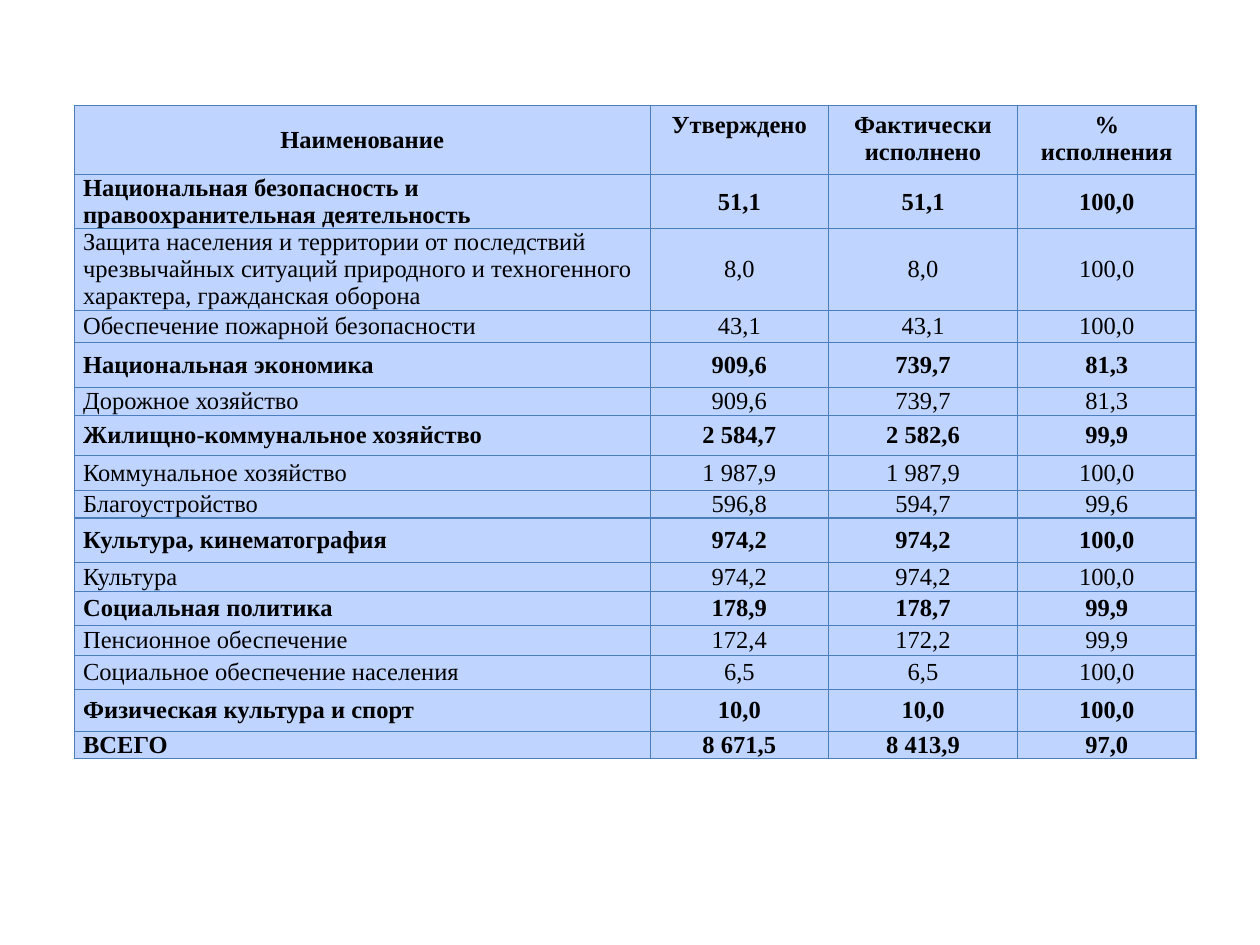
import pptx
import pptx.util
import pptx.dml.color
import pptx.enum.text
import pptx.oxml
import lxml.etree
from pptx.oxml.ns import qn

Pt = pptx.util.Pt
ALIGN = pptx.enum.text.PP_ALIGN
MIDDLE = pptx.enum.text.MSO_ANCHOR.MIDDLE

HEAD = ("Наименование", "Утверждено", "Фактически исполнено", "% исполнения")
WIDTHS = (329, 102, 108, 102)
# height, bold, cells
ROWS = [
    (39.6, True, HEAD),
    (31, True, ("Национальная безопасность и правоохранительная деятельность",
                "51,1", "51,1", "100,0")),
    (46.4, False, ("Защита населения и территории от последствий чрезвычайных "
                   "ситуаций природного и техногенного характера, "
                   "гражданская оборона", "8,0", "8,0", "100,0")),
    (18.4, False, ("Обеспечение пожарной безопасности", "43,1", "43,1", "100,0")),
    (26, True, ("Национальная экономика", "909,6", "739,7", "81,3")),
    (15.6, False, ("Дорожное хозяйство", "909,6", "739,7", "81,3")),
    (23, True, ("Жилищно-коммунальное хозяйство", "2 584,7", "2 582,6", "99,9")),
    (20.2, False, ("Коммунальное хозяйство", "1 987,9", "1 987,9", "100,0")),
    (15.6, False, ("Благоустройство", "596,8", "594,7", "99,6")),
    (25.2, True, ("Культура, кинематография", "974,2", "974,2", "100,0")),
    (17, False, ("Культура", "974,2", "974,2", "100,0")),
    (19.2, True, ("Социальная политика", "178,9", "178,7", "99,9")),
    (17.2, False, ("Пенсионное обеспечение", "172,4", "172,2", "99,9")),
    (19.4, False, ("Социальное обеспечение населения", "6,5", "6,5", "100,0")),
    (24, True, ("Физическая культура и спорт", "10,0", "10,0", "100,0")),
    (15.6, True, ("ВСЕГО", "8 671,5", "8 413,9", "97,0")),
]
JUSTIFY_FROM = 11


def tint(hue):
    return pptx.dml.color.RGBColor.from_string(hue)


def border(cell, hue, width):
    props = cell._tc.get_or_add_tcPr()
    for place, side in enumerate(("a:lnL", "a:lnR", "a:lnT", "a:lnB")):
        line = lxml.etree.Element(qn(side), w=str(Pt(width)))
        fill = lxml.etree.SubElement(line, qn("a:solidFill"))
        lxml.etree.SubElement(fill, qn("a:srgbClr"), val=hue)
        props.insert(place, line)


def fill_cell(cell, text, bold, align):
    cell.text = text
    cell.fill.solid()
    cell.fill.fore_color.rgb = tint("BFD4FF")
    border(cell, "4B7EBC", 0.75)
    para = cell.text_frame.paragraphs[0]
    para.alignment = align
    font = para.font
    font.name, font.size, font.bold = "Times New Roman", Pt(14), bold
    font.color.rgb = tint("000000")


def pad(cell):
    cell.vertical_anchor = MIDDLE
    cell.margin_left = cell.margin_right = Pt(5)
    cell.margin_top = cell.margin_bottom = 0


def budget(slide, left, top, width):
    height = sum(row[0] for row in ROWS)
    table = slide.shapes.add_table(len(ROWS), len(HEAD), Pt(left), Pt(top),
                                   Pt(width), Pt(height)).table
    table.first_row = table.horz_banding = False
    for col, share in zip(table.columns, WIDTHS):
        col.width = Pt(width * share / sum(WIDTHS))
    for r, (tall, bold, texts) in enumerate(ROWS):
        table.rows[r].height = Pt(tall)
        for c, text in enumerate(texts):
            cell = table.cell(r, c)
            if r == 0 or c > 0:
                align = ALIGN.CENTER
            else:
                align = ALIGN.JUSTIFY if r >= JUSTIFY_FROM else ALIGN.LEFT
            fill_cell(cell, text, bold, align)
            if r > 0 or c == 0:
                pad(cell)


def main():
    deck = pptx.Presentation()
    deck.slide_width, deck.slide_height = Pt(720), Pt(540)
    slide = deck.slides.add_slide(deck.slide_layouts[6])
    budget(slide, 42.5, 60.2, 641)
    deck.save("out.pptx")


if __name__ == "__main__":
    main()
